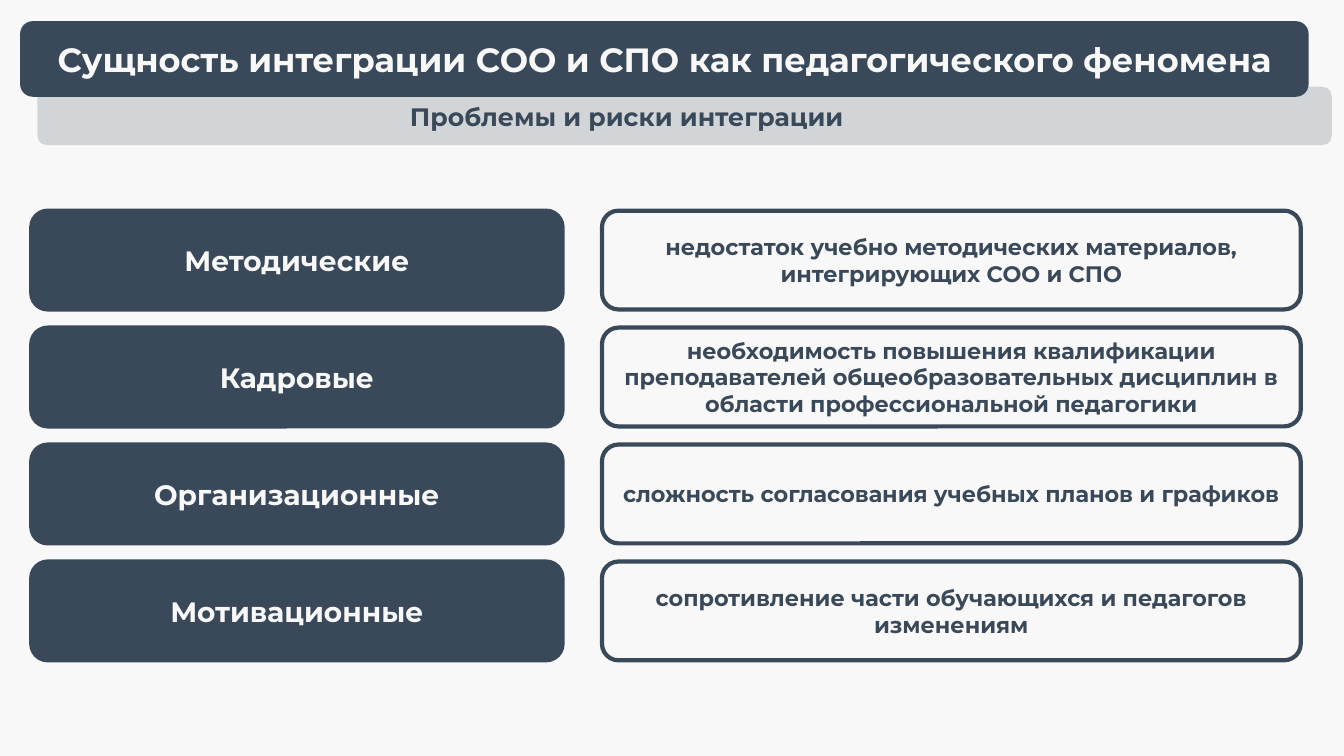
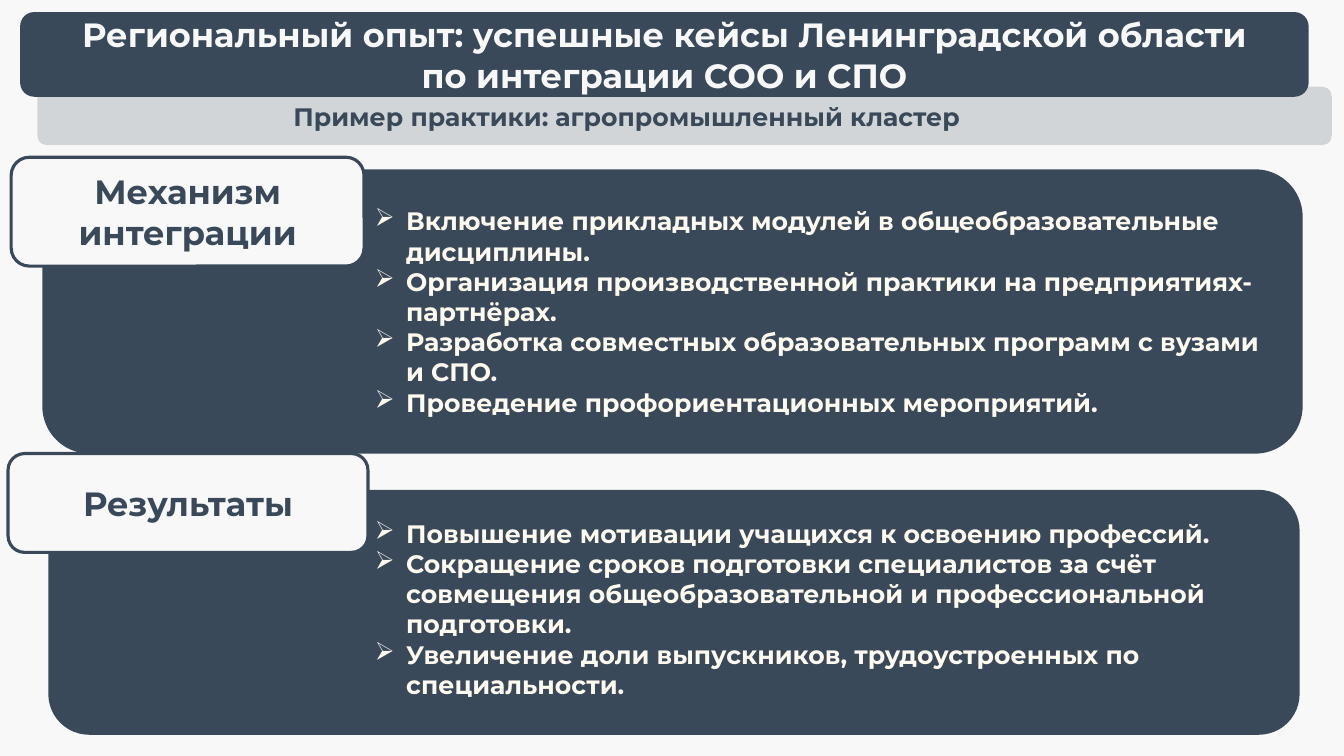
from dataclasses import dataclass
from typing import NamedTuple

from lxml import etree
from pptx import Presentation
from pptx.dml.color import RGBColor
from pptx.enum.shapes import MSO_SHAPE
from pptx.enum.text import MSO_ANCHOR, PP_ALIGN
from pptx.oxml.ns import qn
from pptx.util import Emu, Inches, Pt

ROUNDED = MSO_SHAPE.ROUNDED_RECTANGLE
CENTER, LEFT = PP_ALIGN.CENTER, PP_ALIGN.LEFT
MIDDLE, TOP = MSO_ANCHOR.MIDDLE, MSO_ANCHOR.TOP
SLIDE_WIDTH, SLIDE_HEIGHT = Inches(13.33), Inches(7.5)
BLANK_LAYOUT = 6


@dataclass(frozen=True)
class Theme:
    font: str = "Montserrat"
    dark: RGBColor = RGBColor(0x39, 0x49, 0x59)
    light: RGBColor = RGBColor(0xF8, 0xF8, 0xF8)
    cream: RGBColor = RGBColor(0xFF, 0xFA, 0xF0)
    band_opacity: int = 20
    title_size: int = 24
    row_label_size: int = 20
    body_size: int = 18
    row_text_size: int = 16
    row_line: float = 3
    label_line: float = 2.25
    bullet: str = "➢"
    bullet_indent: float = 0.31


THEME = Theme()


class Box(NamedTuple):
    """A frame in percent of the slide's width and height."""
    left: float
    top: float
    width: float
    height: float

    def lengths(self) -> tuple[Emu, ...]:
        sides = (SLIDE_WIDTH, SLIDE_HEIGHT) * 2
        return tuple(Emu(round(side * share / 100)) for side, share in zip(sides, self))


class TextStyle(NamedTuple):
    size: int
    color: RGBColor
    align: PP_ALIGN = CENTER
    anchor: MSO_ANCHOR = MIDDLE
    bulleted: bool = False


class Risk(NamedTuple):
    name: str
    description: str


class Panel(NamedTuple):
    label: str
    items: tuple[str, ...]
    label_box: Box
    panel_box: Box
    text_box: Box
    anchor: MSO_ANCHOR


BAND = Box(2.78, 11.47, 96.32, 7.73)
SUBTITLE = Box(8.48, 12.8, 76.3, 5.33)
TITLE_LEFT, TITLE_WIDTH, TITLE_BOTTOM = 1.5, 95.87, 12.8
ROWS_TOP, ROW_STEP, ROW_HEIGHT = 27.87, 15.47, 13.07
NAME_LEFT, NAME_WIDTH = 2.33, 39.53
DESCRIPTION_LEFT, DESCRIPTION_WIDTH = 44.79, 51.99

TITLE_STYLE = TextStyle(THEME.title_size, THEME.light)
SUBTITLE_STYLE = TextStyle(THEME.body_size, THEME.dark, anchor=TOP)
NAME_STYLE = TextStyle(THEME.row_label_size, THEME.light)
DESCRIPTION_STYLE = TextStyle(THEME.row_text_size, THEME.dark)
LABEL_STYLE = TextStyle(THEME.title_size, THEME.dark)

RISKS = (
    Risk("Методические",
         "недостаток учебно методических материалов, интегрирующих СОО и СПО"),
    Risk("Кадровые",
         "необходимость повышения квалификации преподавателей общеобразовательных "
         "дисциплин в области профессиональной педагогики"),
    Risk("Организационные", "сложность согласования учебных планов и графиков"),
    Risk("Мотивационные", "сопротивление части обучающихся и педагогов изменениям"),
)

PANELS = (
    Panel("Механизм интеграции",
          ("Включение прикладных модулей в общеобразовательные дисциплины.",
           "Организация производственной практики на предприятиях-партнёрах.",
           "Разработка совместных образовательных программ с вузами и СПО.",
           "Проведение профориентационных мероприятий."),
          label_box=Box(0.83, 20.8, 26.26, 14.4),
          panel_box=Box(3.15, 22.4, 93.77, 37.6),
          text_box=Box(27.16, 24.8, 68.64, 32.8),
          anchor=MIDDLE),
    Panel("Результаты",
          ("Повышение мотивации учащихся к освоению профессий.",
           "Сокращение сроков подготовки специалистов за счёт совмещения "
           "общеобразовательной и профессиональной подготовки.",
           "Увеличение доли выпускников, трудоустроенных по специальности."),
          label_box=Box(0.6, 60, 26.78, 13.07),
          panel_box=Box(3.6, 64.8, 93.1, 32.4),
          text_box=Box(27.16, 67.87, 67.07, 25.4),
          anchor=TOP),
)


def add_bullet(paragraph) -> None:
    properties = paragraph._p.get_or_add_pPr()
    indent = Inches(THEME.bullet_indent)
    properties.set("marL", str(indent))
    properties.set("indent", str(-indent))
    etree.SubElement(properties, qn("a:buChar")).set("char", THEME.bullet)


def write_text(shape, paragraphs: tuple[str, ...], style: TextStyle) -> None:
    """Fill the shape with paragraphs; a newline becomes a line break."""
    frame = shape.text_frame
    frame.word_wrap = True
    frame.vertical_anchor = style.anchor
    for index, text in enumerate(paragraphs):
        paragraph = frame.add_paragraph() if index else frame.paragraphs[0]
        paragraph.alignment = style.align
        if style.bulleted:
            add_bullet(paragraph)
        for line_index, line in enumerate(text.split("\n")):
            if line_index:
                paragraph.add_line_break()
            run = paragraph.add_run()
            run.text = line
            run.font.name = THEME.font
            run.font.size = Pt(style.size)
            run.font.bold = True
            run.font.color.rgb = style.color


def add_text(slide, box: Box, paragraphs: tuple[str, ...], style: TextStyle) -> None:
    write_text(slide.shapes.add_textbox(*box.lengths()), paragraphs, style)


def add_card(slide, box: Box, fill: RGBColor | None, line_width: float = 0,
             text: str = "", style: TextStyle = TITLE_STYLE):
    shape = slide.shapes.add_shape(ROUNDED, *box.lengths())
    shape.shadow.inherit = False
    if fill is None:
        shape.fill.background()
    else:
        shape.fill.solid()
        shape.fill.fore_color.rgb = fill
    if line_width:
        shape.line.color.rgb = THEME.dark
        shape.line.width = Pt(line_width)
    else:
        shape.line.fill.background()
    if text:
        write_text(shape, (text,), style)
    return shape


def set_opacity(shape, percent: int) -> None:
    color = shape._element.spPr.find(qn("a:solidFill"))[0]
    etree.SubElement(color, qn("a:alpha")).set("val", str(percent * 1000))


def add_titled_slide(presentation, title: str, subtitle: str, title_top: float):
    slide = presentation.slides.add_slide(presentation.slide_layouts[BLANK_LAYOUT])
    slide.background.fill.solid()
    slide.background.fill.fore_color.rgb = THEME.light
    set_opacity(add_card(slide, BAND, THEME.dark), THEME.band_opacity)
    add_text(slide, SUBTITLE, (subtitle,), SUBTITLE_STYLE)
    title_box = Box(TITLE_LEFT, title_top, TITLE_WIDTH, TITLE_BOTTOM - title_top)
    add_card(slide, title_box, THEME.dark, text=title, style=TITLE_STYLE)
    return slide


def add_risk_row(slide, row: int, risk: Risk) -> None:
    top = ROWS_TOP + row * ROW_STEP
    add_card(slide, Box(NAME_LEFT, top, NAME_WIDTH, ROW_HEIGHT), THEME.dark,
             THEME.row_line, risk.name, NAME_STYLE)
    add_card(slide, Box(DESCRIPTION_LEFT, top, DESCRIPTION_WIDTH, ROW_HEIGHT), None,
             THEME.row_line, risk.description, DESCRIPTION_STYLE)


def add_panel(slide, panel: Panel) -> None:
    add_card(slide, panel.panel_box, THEME.dark)
    add_text(slide, panel.text_box, panel.items,
             TextStyle(THEME.body_size, THEME.cream, LEFT, panel.anchor, bulleted=True))
    add_card(slide, panel.label_box, THEME.light, THEME.label_line,
             panel.label, LABEL_STYLE)


def main() -> None:
    presentation = Presentation()
    presentation.slide_width = SLIDE_WIDTH
    presentation.slide_height = SLIDE_HEIGHT

    risks_slide = add_titled_slide(
        presentation, "Сущность интеграции СОО и СПО как педагогического феномена",
        "Проблемы и риски интеграции", title_top=2.8)
    for row, risk in enumerate(RISKS):
        add_risk_row(risks_slide, row, risk)

    practice_slide = add_titled_slide(
        presentation,
        "Региональный опыт: успешные кейсы Ленинградской области\n"
        "по интеграции СОО и СПО",
        "Пример практики: агропромышленный кластер", title_top=1.6)
    for panel in PANELS:
        add_panel(practice_slide, panel)

    presentation.save("out.pptx")


if __name__ == "__main__":
    main()
